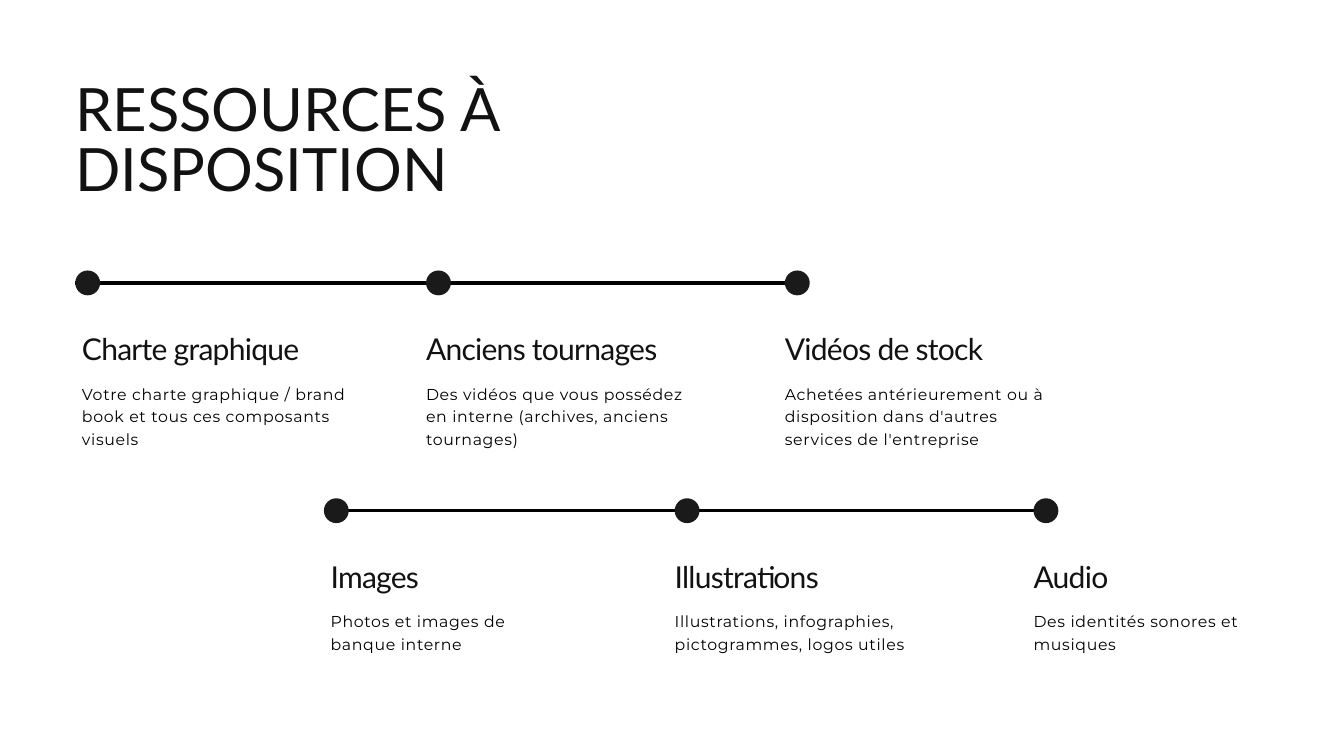
from dataclasses import dataclass

from lxml.etree import SubElement
from pptx import Presentation
from pptx.dml.color import RGBColor
from pptx.enum.shapes import MSO_CONNECTOR, MSO_SHAPE
from pptx.enum.text import MSO_AUTO_SIZE
from pptx.oxml.ns import qn
from pptx.util import Inches, Pt


@dataclass(frozen=True)
class TextStyle:
    font: str
    size: float
    leading: float
    color: RGBColor
    tracking: float = 0


@dataclass(frozen=True)
class Theme:
    line = RGBColor(0x00, 0x00, 0x00)
    dot = RGBColor(0x1A, 0x1A, 0x1A)
    line_width = 3.75
    title = TextStyle("Lato", 64, 64, RGBColor(0x12, 0x12, 0x12))
    heading = TextStyle("Lato", 32.2, 41.2, RGBColor(0x12, 0x12, 0x12), -0.8)
    body = TextStyle("Montserrat", 16.9, 24.5, RGBColor(0x00, 0x00, 0x00), 0.7)


THEME = Theme()
DOT_SIZE = 0.37
DOT_OFFSETS = (0, 5.22, 10.56)
TEXT_OFFSETS = (0.1, 5.22, 10.56)
HEADING_DROP, BODY_DROP = 0.67, 1.45

# Each timeline: left, axis height, steps (heading, description, width, height)
TIMELINES = [
    (1.12, 4.21, [
        ("Charte graphique",
         "Votre charte graphique / brand book et tous ces composants visuels",
         3.97, 1.02),
        ("Anciens tournages",
         "Des vidéos que vous possédez en interne (archives, anciens tournages)",
         4.07, 1.37),
        ("Vidéos de stock",
         "Achetées antérieurement ou à disposition dans d'autres services de l'entreprise",
         4.07, 1.02),
    ]),
    (4.82, 7.6, [
        ("Images", "Photos et images de banque interne", 3.5, 0.67),
        ("Illustrations",
         "Illustrations, infographies, pictogrammes, logos utiles", 3.5, 0.67),
        ("Audio", "Des identités sonores et musiques", 3.5, 1.02),
    ]),
]


def add_text(page, left, top, width, height, text, style):
    box = page.shapes.add_textbox(
        Inches(left), Inches(top), Inches(width), Inches(height))
    frame = box.text_frame
    frame.margin_left = frame.margin_right = 0
    frame.margin_top = frame.margin_bottom = 0
    frame.word_wrap = True
    frame.auto_size = MSO_AUTO_SIZE.SHAPE_TO_FIT_TEXT
    para = frame.paragraphs[0]
    para.line_spacing = Pt(style.leading)
    span = para.add_run()
    span.text = text
    span.font.name = style.font
    span.font.size = Pt(style.size)
    span.font.color.rgb = style.color
    if style.tracking:
        span._r.get_or_add_rPr().set("spc", str(round(style.tracking * 100)))


def add_axis(page, left, top, length):
    axis = page.shapes.add_connector(
        MSO_CONNECTOR.STRAIGHT,
        Inches(left), Inches(top), Inches(left + length), Inches(top))
    axis.line.color.rgb = THEME.line
    axis.line.width = Pt(THEME.line_width)
    SubElement(axis._element.spPr, qn("a:effectLst"))


def add_dot(page, left, middle):
    dot = page.shapes.add_shape(
        MSO_SHAPE.OVAL, Inches(left), Inches(middle - DOT_SIZE / 2),
        Inches(DOT_SIZE), Inches(DOT_SIZE))
    dot.shadow.inherit = False
    dot.fill.solid()
    dot.fill.fore_color.rgb = THEME.dot
    dot.line.fill.background()


def add_timeline(page, left, top, steps):
    # Axis with its dots
    add_axis(page, left, top, DOT_OFFSETS[-1])
    for offset in DOT_OFFSETS:
        add_dot(page, left + offset, top)

    # Heading and description under each dot
    for offset, (heading, description, width, height) in zip(TEXT_OFFSETS, steps):
        add_text(page, left + offset, top + HEADING_DROP, 3.88, 0.58,
                 heading, THEME.heading)
        add_text(page, left + offset, top + BODY_DROP, width, height,
                 description, THEME.body)


def main():
    deck = Presentation()
    deck.slide_width, deck.slide_height = Inches(20), Inches(11.25)
    page = deck.slides.add_slide(deck.slide_layouts[6])

    # Title
    add_text(page, 1.12, 1.25, 10.81, 1.82, "RESSOURCES À DISPOSITION", THEME.title)

    # Two staggered timelines
    for left, top, steps in TIMELINES:
        add_timeline(page, left, top, steps)

    deck.save("out.pptx")


if __name__ == "__main__":
    main()
